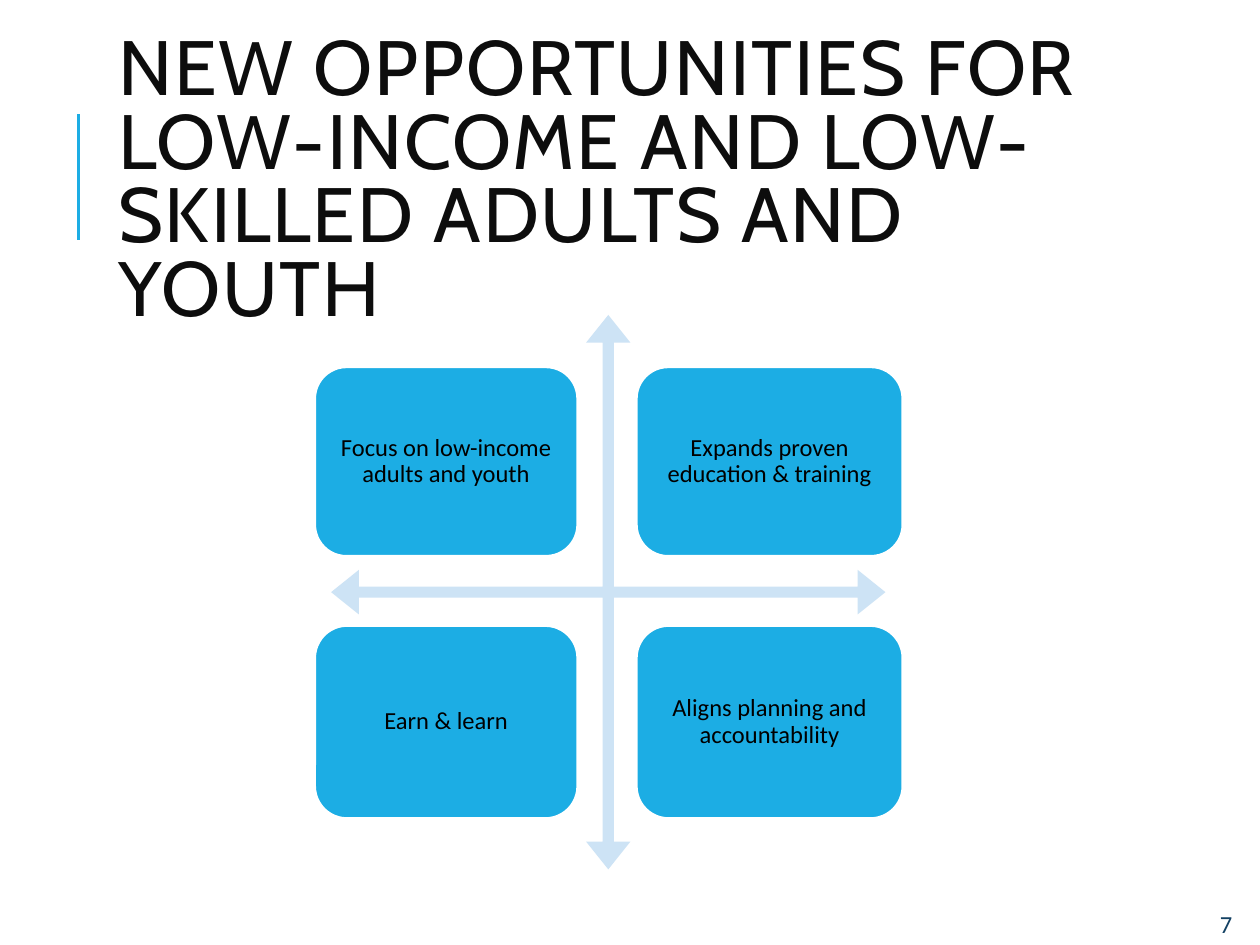
from pptx import Presentation
from pptx.dml.color import RGBColor
from pptx.enum.shapes import MSO_CONNECTOR, MSO_SHAPE
from pptx.enum.text import MSO_ANCHOR, PP_ALIGN
from pptx.oxml.ns import qn
from pptx.util import Pt
from lxml import etree

STRAIGHT = MSO_CONNECTOR.STRAIGHT
QUAD_ARROW = MSO_SHAPE.QUAD_ARROW
ROUND_RECT = MSO_SHAPE.ROUNDED_RECTANGLE
MIDDLE = MSO_ANCHOR.MIDDLE
CENTER = PP_ALIGN.CENTER

BLUE = "1CADE4"


def rgb(value):
    return RGBColor.from_string(value)


def write(tf, text, name, size, color):
    tf.word_wrap = True
    p = tf.paragraphs[0]
    p.text = text
    p.font.name = name
    p.font.size = Pt(size)
    p.font.color.rgb = rgb(color)
    return p


prs = Presentation()
prs.slide_width = Pt(720)
prs.slide_height = Pt(540)
s = prs.slides.add_slide(prs.slide_layouts[6])

accent = s.shapes.add_connector(STRAIGHT, Pt(45), Pt(137), Pt(45), Pt(65))
accent.line.color.rgb = rgb(BLUE)
accent.line.width = Pt(1.5)
etree.SubElement(accent._element.spPr, qn("a:effectLst"))

number = s.shapes.add_textbox(Pt(690), Pt(516), Pt(36), Pt(29))
write(number.text_frame, "7", "Calibri", 14, "134163")

title = s.shapes.add_textbox(Pt(60.5), Pt(46), Pt(574), Pt(118))
title.text_frame.vertical_anchor = MIDDLE
p = write(
    title.text_frame,
    "NEW OPPORTUNITIES FOR LOW-INCOME AND LOW-SKILLED ADULTS AND YOUTH",
    "Cabin", 44, "0D0D0D",
)
p.line_spacing = 0.8
p.runs[0].font._element.set("spc", "100")

arrows = s.shapes.add_shape(QUAD_ARROW, Pt(189.2), Pt(180), Pt(316.8), Pt(316.8))
arrows.shadow.inherit = False
for i, value in enumerate((0.02, 0.04, 0.05)):
    arrows.adjustments[i] = value
arrows.fill.solid()
arrows.fill.fore_color.rgb = rgb("CDE3F5")
arrows.line.fill.background()

columns = [(180, 150), (363.8, 152)]
rows = [(209.8, 108), (357.6, 110)]
labels = [
    ["Focus on low-income adults and youth", "Expands proven education & training"],
    ["Earn & learn", "Aligns planning and accountability"],
]
for (top, height), row in zip(rows, labels):
    for (left, width), label in zip(columns, row):
        sp = s.shapes.add_shape(ROUND_RECT, Pt(left), Pt(top), Pt(width), Pt(height))
        sp.shadow.inherit = False
        sp.fill.solid()
        sp.fill.fore_color.rgb = rgb(BLUE)
        sp.line.color.rgb = rgb("FFFFFF")
        sp.line.width = Pt(1.25)
        tf = sp.text_frame
        tf.margin_left = tf.margin_right = tf.margin_top = tf.margin_bottom = Pt(4.2)
        tf.vertical_anchor = MIDDLE
        p = write(tf, label, "Calibri", 14, "000000")
        p.alignment = CENTER
        p.line_spacing = 0.9

prs.save("out.pptx")
